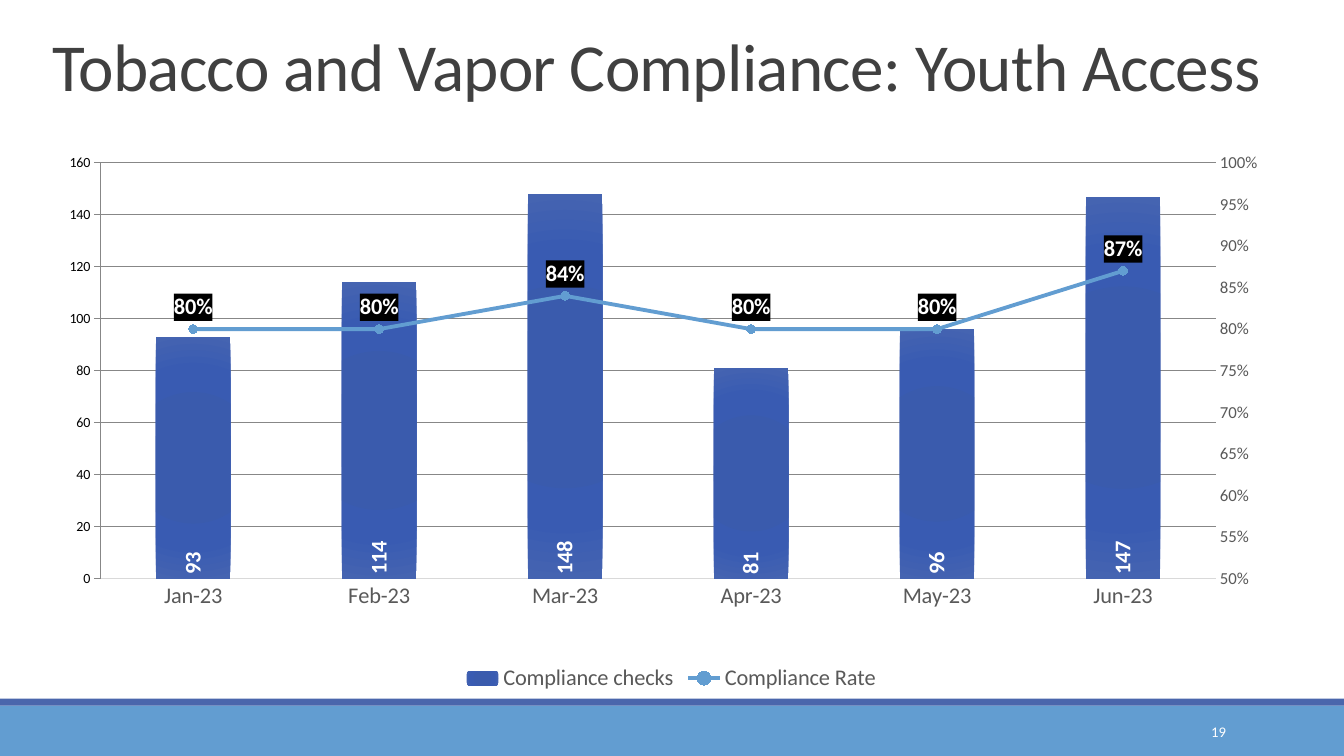
from dataclasses import dataclass

from pptx import Presentation
from pptx.chart import axis as ax, data as cd
from pptx.dml.color import RGBColor
from pptx.enum import chart as ce, shapes, text
from pptx.oxml import parse_xml
from pptx.oxml.ns import nsdecls, qn
from pptx.util import Pt

FONT = "Calibri"
WHITE, GREY, GRID = "FFFFFF", "595959", "D9D9D9"
NAVY, SKY = "4A66AC", "629DD1"
MONTHS = ["Jan-23", "Feb-23", "Mar-23", "Apr-23", "May-23", "Jun-23"]
BAR_STOPS = [(0, "3759AE"), (34, "3A5BAD"), (70, "395BB2"), (100, "4564B1")]
PLOT_AREA = {"x": 0.046, "y": 0.039, "w": 0.887, "h": 0.749}


@dataclass
class Band:
    top: float
    height: float
    color: str


@dataclass
class Measure:
    name: str
    values: list[float]
    number_format: str
    label_position: ce.XL_LABEL_POSITION


BANDS = [Band(504, 36, SKY), Band(499, 5, NAVY)]
CHECKS = Measure("Compliance checks", [93, 114, 148, 81, 96, 147], "General",
                 ce.XL_LABEL_POSITION.INSIDE_BASE)
RATE = Measure("Compliance Rate", [0.8, 0.8, 0.84, 0.8, 0.8, 0.87], "0%",
               ce.XL_LABEL_POSITION.ABOVE)


def rgb(value: str) -> RGBColor:
    return RGBColor.from_string(value)


def set_font(font, size: float, color: str, bold: bool = False) -> None:
    font.name, font.size, font.bold = FONT, Pt(size), bold
    font.color.rgb = rgb(color)


def xml(tag: str, body: str):
    """Build a chart element with the chart and drawing namespaces."""
    return parse_xml(f"<{tag} {nsdecls('c', 'a')}>{body}</{tag}>")


def remove_children(parent, tag: str) -> None:
    for child in parent.findall(qn(tag)):
        parent.remove(child)


def add_band(s, band: Band) -> None:
    sp = s.shapes.add_shape(shapes.MSO_SHAPE.RECTANGLE, 0, Pt(band.top),
                            Pt(960), Pt(band.height))
    sp.shadow.inherit = False
    sp.fill.solid()
    sp.fill.fore_color.rgb = rgb(band.color)
    sp.line.fill.background()


def add_title(s, title: str) -> None:
    sp = s.shapes.title
    sp.left, sp.top, sp.width, sp.height = Pt(30.24), Pt(22.3), Pt(883.4), Pt(114.5)
    tf = sp.text_frame
    tf.word_wrap = True
    tf.auto_size = text.MSO_AUTO_SIZE.NONE
    tf.vertical_anchor = text.MSO_ANCHOR.TOP
    p = tf.paragraphs[0]
    p.alignment, p.line_spacing = text.PP_ALIGN.LEFT, 0.85
    r = p.add_run()
    r.text = title
    set_font(r.font, 48, "404040")
    r.font._element.set("spc", "-50")


def add_slide_number(s, number: str) -> None:
    tf = s.shapes.add_textbox(Pt(779.8), Pt(508.3), Pt(103), Pt(28.8)).text_frame
    tf.word_wrap = True
    tf.vertical_anchor = text.MSO_ANCHOR.MIDDLE
    p = tf.paragraphs[0]
    p.alignment = text.PP_ALIGN.RIGHT
    r = p.add_run()
    r.text = number
    set_font(r.font, 10.5, WHITE)


def move_rate_to_line(plot_area) -> ax.ValueAxis:
    """Turn the second series into a line on a right-hand axis."""
    bars = plot_area.find(qn("c:barChart"))
    ser = bars.findall(qn("c:ser"))[1]
    remove_children(ser, "c:invertIfNegative")
    line = xml("c:lineChart", '<c:grouping val="standard"/><c:varyColors val="0"/>'
               '<c:marker val="1"/><c:axId val="5001"/><c:axId val="5002"/>')
    line.insert(2, ser)
    bars.addnext(line)
    scaling = '<c:scaling><c:orientation val="minMax"/></c:scaling>'
    right = xml("c:valAx", f'<c:axId val="5002"/>{scaling}<c:delete val="0"/>'
                '<c:axPos val="r"/><c:crossAx val="5001"/><c:crosses val="max"/>')
    hidden = xml("c:catAx", f'<c:axId val="5001"/>{scaling}<c:delete val="1"/>'
                 '<c:axPos val="b"/><c:crossAx val="5002"/>')
    left = plot_area.find(qn("c:valAx"))
    left.addnext(right)
    right.addnext(hidden)
    return ax.ValueAxis(right)


def place_plot_area(plot_area) -> None:
    remove_children(plot_area, "c:layout")
    sides = "".join(f'<c:{k} val="{v}"/>' for k, v in PLOT_AREA.items())
    plot_area.insert(0, xml("c:layout", '<c:manualLayout><c:layoutTarget val="inner"/>'
                            '<c:xMode val="edge"/><c:yMode val="edge"/>'
                            f'{sides}</c:manualLayout>'))


def style_axis(axis, size: float, number_format: str, line: str | None = None) -> None:
    axis.major_tick_mark = axis.minor_tick_mark = ce.XL_TICK_MARK.NONE
    axis.tick_label_position = ce.XL_TICK_LABEL_POSITION.NEXT_TO_AXIS
    axis.tick_labels.number_format = number_format
    axis.tick_labels.number_format_is_linked = False
    set_font(axis.tick_labels.font, size, GREY)
    if line:
        axis.format.line.color.rgb = rgb(line)
        axis.format.line.width = Pt(1)
    else:
        axis.format.line.fill.background()


def add_labels(series, measure: Measure):
    """Show the values and return the text properties of the labels."""
    labels = series.data_labels
    labels.show_value = True
    labels.number_format = measure.number_format
    labels.number_format_is_linked = False
    labels.position = measure.label_position
    set_font(labels.font, 16, WHITE, bold=True)
    return series._element.find(f"{qn('c:dLbls')}/{qn('c:txPr')}")


def style_checks(series) -> None:
    series.format.fill.solid()
    stops = "".join(f'<a:gs pos="{pos * 1000}"><a:srgbClr val="{color}"/></a:gs>'
                    for pos, color in BAR_STOPS)
    solid = series._element.find(f"{qn('c:spPr')}/{qn('a:solidFill')}")
    solid.getparent().replace(solid, xml(
        "a:gradFill", f'<a:gsLst>{stops}</a:gsLst><a:path path="circle">'
        '<a:fillToRect l="50000" t="50000" r="50000" b="50000"/></a:path>'))
    body = add_labels(series, CHECKS).find(qn("a:bodyPr"))
    body.set("rot", "-5400000")
    body.set("vert", "horz")


def style_rate(series) -> None:
    series.smooth = False
    series.format.line.color.rgb = rgb(SKY)
    series.format.line.width = Pt(2.75)
    marker = series.marker
    marker.style, marker.size = ce.XL_MARKER_STYLE.CIRCLE, 6
    marker.format.fill.solid()
    marker.format.fill.fore_color.rgb = rgb("4E97D8")
    marker.format.line.color.rgb = rgb(SKY)
    add_labels(series, RATE).addprevious(xml(
        "c:spPr", '<a:solidFill><a:srgbClr val="000000"/></a:solidFill>'))


def add_compliance_chart(s) -> None:
    data = cd.CategoryChartData()
    data.categories = MONTHS
    for m in (CHECKS, RATE):
        data.add_series(m.name, m.values, m.number_format)
    chart = s.shapes.add_chart(ce.XL_CHART_TYPE.COLUMN_CLUSTERED, Pt(30.24), Pt(100.8),
                               Pt(898.6), Pt(396.7), data).chart
    set_font(chart.font, 10, "000000")
    chart.has_title = False
    chart.has_legend = True
    chart.legend.position = ce.XL_LEGEND_POSITION.BOTTOM
    chart.legend.include_in_layout = False
    set_font(chart.legend.font, 16, GREY)

    plot_area = chart.element.find(f".//{qn('c:plotArea')}")
    right = move_rate_to_line(plot_area)
    place_plot_area(plot_area)
    left = chart.value_axis
    style_axis(chart.category_axis, 16, "General", GRID)
    style_axis(left, 12, "General")
    style_axis(right, 12, "0%")
    left.minimum_scale, left.maximum_scale, left.major_unit = 0, 160, 20
    right.minimum_scale, right.maximum_scale, right.major_unit = 0.5, 1, 0.05
    grid = left.major_gridlines.format.line
    grid.color.rgb, grid.width = rgb(GRID), Pt(0.75)

    bars, line = chart.plots
    bars.gap_width, bars.vary_by_categories = 150, False
    style_checks(bars.series[0])
    style_rate(line.series[0])


def main() -> None:
    prs = Presentation()
    prs.slide_width, prs.slide_height = Pt(960), Pt(540)
    s = prs.slides.add_slide(prs.slide_layouts[5])
    for band in BANDS:
        add_band(s, band)
    add_title(s, "Tobacco and Vapor Compliance: Youth Access")
    add_compliance_chart(s)
    add_slide_number(s, "19")
    prs.save("out.pptx")


if __name__ == "__main__":
    main()
